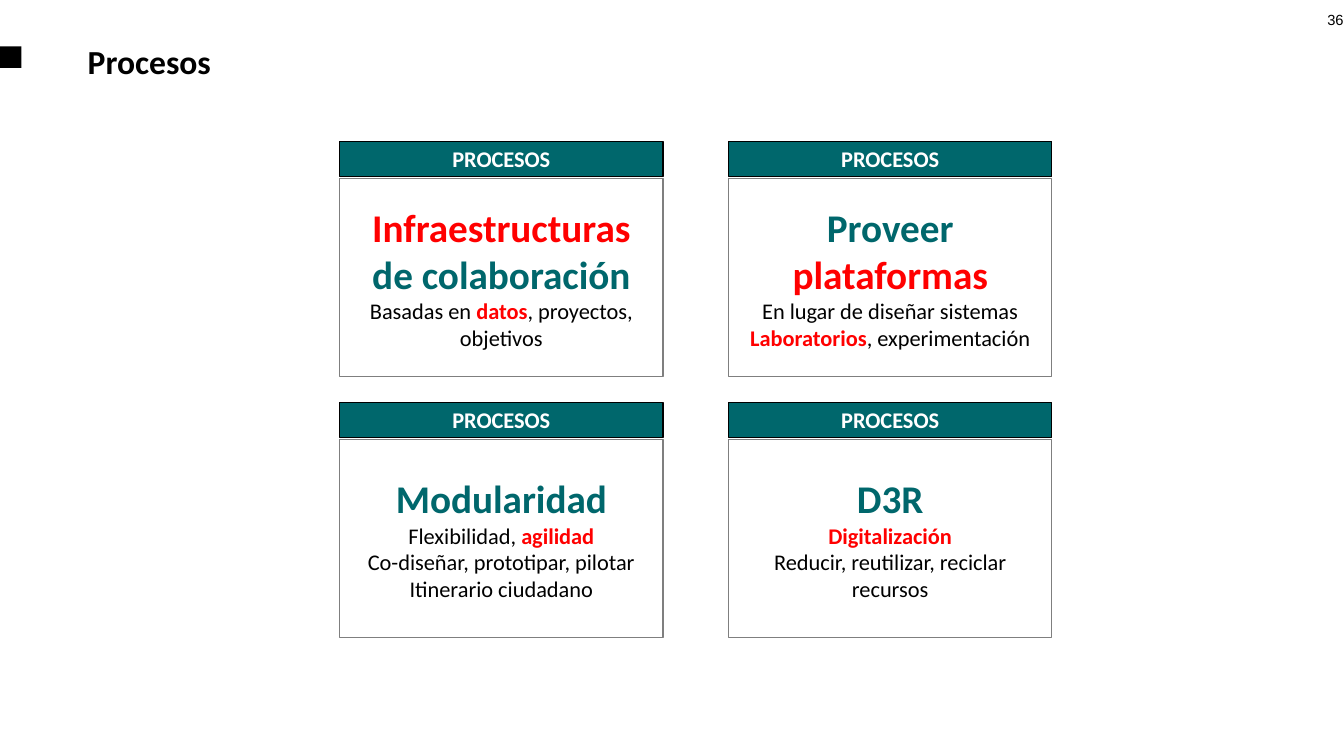
import pptx
import pptx.dml.color
import pptx.enum.shapes
import pptx.enum.text
import pptx.util

Cm = pptx.util.Cm
Pt = pptx.util.Pt
RGBColor = pptx.dml.color.RGBColor
ALIGN = pptx.enum.text.PP_ALIGN
ANCHOR = pptx.enum.text.MSO_ANCHOR

TEAL = RGBColor(0x00, 0x67, 0x6C)
RED = RGBColor(0xFF, 0x00, 0x00)
BLACK = RGBColor(0x00, 0x00, 0x00)
WHITE = RGBColor(0xFF, 0xFF, 0xFF)
GRAY = RGBColor(0x7F, 0x7F, 0x7F)

TITLE = "Procesos"
PAGE_NUMBER = "36"
HEADER = "PROCESOS"

HEADING = (28, TEAL, True)
HEADING_RED = (28, RED, True)
DETAIL = (16, BLACK, False)
DETAIL_RED = (16, RED, True)
HEADER_STYLE = (16, WHITE, True)

CARDS = [
    [
        [("Infraestructuras", HEADING_RED), (" de colaboración", HEADING)],
        [("Basadas en ", DETAIL), ("datos", DETAIL_RED), (", proyectos, objetivos", DETAIL)],
    ],
    [
        [("Proveer ", HEADING), ("plataformas", HEADING_RED)],
        [("En lugar de diseñar sistemas", DETAIL)],
        [("Laboratorios", DETAIL_RED), (", experimentación", DETAIL)],
    ],
    [
        [("Modularidad", HEADING)],
        [("Flexibilidad, ", DETAIL), ("agilidad", DETAIL_RED)],
        [("Co-diseñar, prototipar, pilotar", DETAIL)],
        [("Itinerario ciudadano", DETAIL)],
    ],
    [
        [("D3R", HEADING)],
        [("Digitalización", DETAIL_RED)],
        [("Reducir, reutilizar, reciclar recursos", DETAIL)],
    ],
]

COLUMNS = 2
GRID_LEFT, GRID_TOP = 8.56, 3.56
COLUMN_STEP, ROW_STEP = 9.8, 6.58
CARD_WIDTH, HEADER_HEIGHT, BODY_HEIGHT = 8.15, 0.89, 5.0
BODY_OFFSET = 0.93


def write_text(shape, paragraphs, alignment, anchor, font_name="Calibri"):
    frame = shape.text_frame
    frame.word_wrap = True
    frame.vertical_anchor = anchor
    for index, runs in enumerate(paragraphs):
        paragraph = frame.add_paragraph() if index else frame.paragraphs[0]
        paragraph.alignment = alignment
        for text, (size, color, bold) in runs:
            run = paragraph.add_run()
            run.text = text
            run.font.name = font_name
            run.font.size = Pt(size)
            run.font.color.rgb = color
            run.font.bold = bold


def add_rectangle(slide, left, top, width, height, fill, line=None):
    shape = slide.shapes.add_shape(
        pptx.enum.shapes.MSO_SHAPE.RECTANGLE, Cm(left), Cm(top), Cm(width), Cm(height)
    )
    shape.shadow.inherit = False
    shape.fill.solid()
    shape.fill.fore_color.rgb = fill
    if line is None:
        shape.line.fill.background()
    else:
        shape.line.color.rgb = line
        shape.line.width = Pt(0)
    return shape


def add_card(slide, left, top, paragraphs):
    body = add_rectangle(slide, left, top + BODY_OFFSET, CARD_WIDTH, BODY_HEIGHT, WHITE, GRAY)
    write_text(body, paragraphs, ALIGN.CENTER, ANCHOR.MIDDLE)
    header = add_rectangle(slide, left, top, CARD_WIDTH, HEADER_HEIGHT, TEAL, BLACK)
    write_text(header, [[(HEADER, HEADER_STYLE)]], ALIGN.CENTER, ANCHOR.MIDDLE)


def main():
    presentation = pptx.Presentation()
    presentation.slide_width = Cm(33.87)
    presentation.slide_height = Cm(19.05)
    slide = presentation.slides.add_slide(presentation.slide_layouts[6])

    add_rectangle(slide, 0, 1.17, 0.54, 0.54, BLACK)
    number = slide.shapes.add_textbox(Cm(32.49), Cm(0.15), Cm(1.37), Cm(1.02))
    number.text_frame.margin_right = 0
    write_text(number, [[(PAGE_NUMBER, (10.5, BLACK, False))]], ALIGN.RIGHT, ANCHOR.TOP, "Arial")
    title = slide.shapes.add_textbox(Cm(1.96), Cm(0.7), Cm(30), Cm(1.68))
    write_text(title, [[(TITLE, (24, BLACK, True))]], ALIGN.LEFT, ANCHOR.MIDDLE)

    for index, paragraphs in enumerate(CARDS):
        row, column = divmod(index, COLUMNS)
        add_card(slide, GRID_LEFT + column * COLUMN_STEP, GRID_TOP + row * ROW_STEP, paragraphs)

    presentation.save("out.pptx")


if __name__ == "__main__":
    main()
